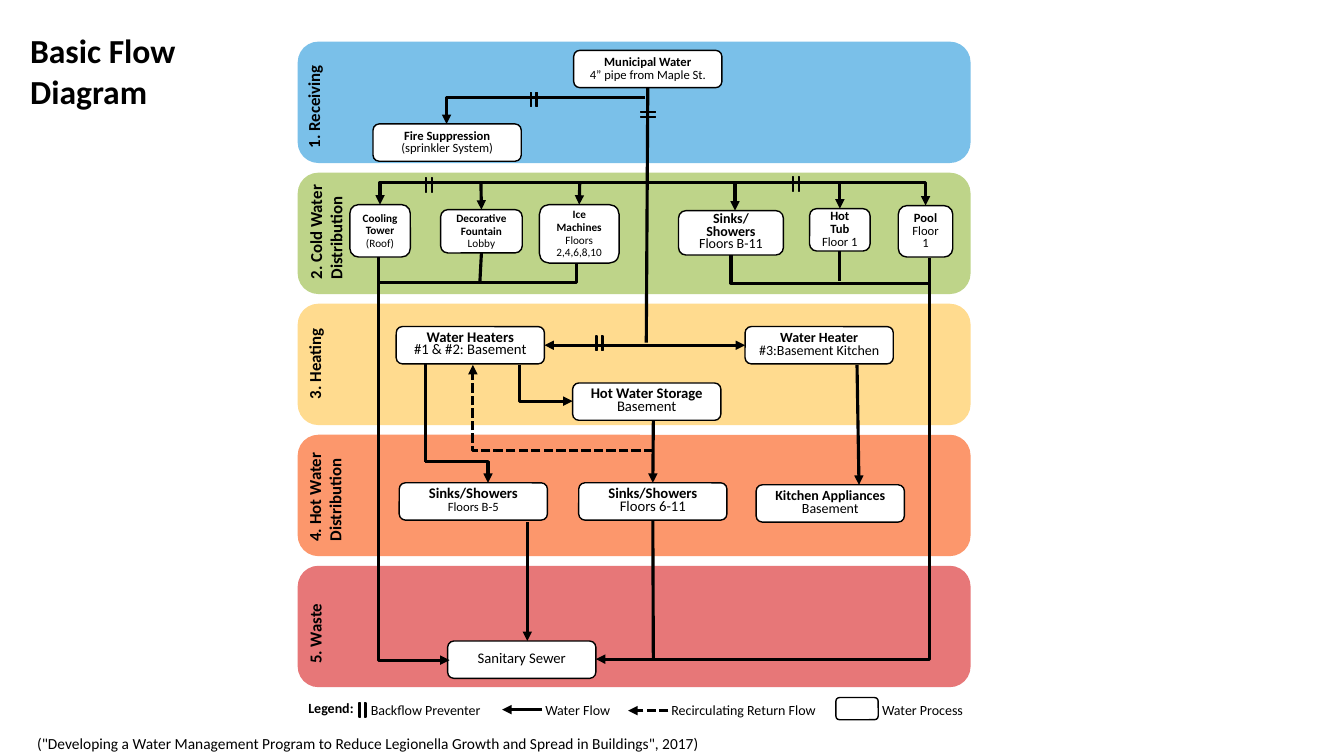
import dataclasses

import pptx
import pptx.dml.color
import pptx.enum.dml
import pptx.enum.shapes
import pptx.enum.text
import pptx.oxml
import pptx.oxml.ns
import pptx.util

SHAPES = pptx.enum.shapes.MSO_SHAPE
CONNECTORS = pptx.enum.shapes.MSO_CONNECTOR
TOP, LEFT, BOTTOM, RIGHT = range(4)


@dataclasses.dataclass(frozen=True)
class Theme:
    font: str = "Calibri"
    ink: str = "000000"
    paper: str = "FFFFFF"
    bands: tuple = ("7AC0E9", "BED489", "FFDB8F", "FC976C", "E77778")
    title: float = 24
    stage: float = 12
    source: float = 11
    large: float = 10.5
    body: float = 10
    small: float = 9
    tiny: float = 8
    leading: float = 9
    outline: float = 1
    pipe: float = 2.25


class FlowPage:
    columns = 133.3
    rows = 75

    def __init__(self, deck, theme):
        self.deck = deck
        self.theme = theme
        self.page = deck.slides.add_slide(deck.slide_layouts[6])

    def across(self, columns):
        return round(self.deck.slide_width * columns / self.columns)

    def down(self, rows):
        return round(self.deck.slide_height * rows / self.rows)

    def place(self, left, top, width, height):
        return self.across(left), self.down(top), self.across(width), self.down(height)

    def color(self, value):
        return pptx.dml.color.RGBColor.from_string(value)

    def add_span(self, para, text, size, bold):
        span = para.add_run()
        span.text = text
        span.font.name = self.theme.font
        span.font.size = pptx.util.Pt(size)
        span.font.bold = bold
        span.font.color.rgb = self.color(self.theme.ink)

    def shape(self, kind, area, fill, line):
        shape = self.page.shapes.add_shape(kind, *self.place(*area))
        shape.shadow.inherit = False
        shape.fill.solid()
        shape.fill.fore_color.rgb = self.color(fill)
        shape.line.color.rgb = self.color(line)
        shape.line.width = pptx.util.Pt(self.theme.outline)
        return shape

    def band(self, area, color):
        self.shape(SHAPES.ROUNDED_RECTANGLE, area, color, color)

    def process(self, area, *lines):
        box = self.shape(SHAPES.ROUNDED_RECTANGLE, area, self.theme.paper, self.theme.ink)
        frame = box.text_frame
        frame.word_wrap = True
        frame.vertical_anchor = pptx.enum.text.MSO_ANCHOR.MIDDLE
        for index, (text, size, bold) in enumerate(lines):
            para = frame.add_paragraph() if index else frame.paragraphs[0]
            para.alignment = pptx.enum.text.PP_ALIGN.CENTER
            para.line_spacing = pptx.util.Pt(self.theme.leading)
            self.add_span(para, text, size, bold)
        return box

    def preventer(self, area, rotation=90, bar=0.066, gap=0.235):
        mark = self.shape(SHAPES.MATH_EQUAL, area, self.theme.ink, self.theme.ink)
        mark.rotation = rotation
        mark.adjustments[0] = bar
        mark.adjustments[1] = gap

    def label(self, area, text, size, bold=False, rotation=0):
        box = self.page.shapes.add_textbox(*self.place(*area))
        box.rotation = rotation
        box.text_frame.word_wrap = True
        box.text_frame.auto_size = pptx.enum.text.MSO_AUTO_SIZE.SHAPE_TO_FIT_TEXT
        self.add_span(box.text_frame.paragraphs[0], text, size, bold)

    def pipe(self, start, end, arrows=(), bent=False, dashed=False, source=None, target=None):
        kind = CONNECTORS.ELBOW if bent else CONNECTORS.STRAIGHT
        pipe = self.page.shapes.add_connector(
            kind, self.across(start[0]), self.down(start[1]),
            self.across(end[0]), self.down(end[1]))
        if source:
            pipe.begin_connect(*source)
        if target:
            pipe.end_connect(*target)
        pipe.line.color.rgb = self.color(self.theme.ink)
        pipe.line.width = pptx.util.Pt(self.theme.pipe)
        if dashed:
            pipe.line.dash_style = pptx.enum.dml.MSO_LINE.SQUARE_DOT
        properties = pipe.element.spPr
        name = pptx.oxml.ns.qn
        if bent:
            properties.find(name("a:prstGeom")).set("prst", "bentConnector2")
        outline = properties.find(name("a:ln"))
        for arrow in arrows:
            outline.append(outline.makeelement(name(f"a:{arrow}End"), {"type": "triangle"}))
        properties.append(properties.makeelement(name("a:effectLst"), {}))


def draw_bands(flow, theme):
    for index, color in enumerate(theme.bands):
        flow.band((29.6, 4.2 + 13 * index, 66.6, 11.9), color)
    stages = (
        ("1. Receiving", (25.2, 8.3, 11.8, 3)),
        ("2. Cold Water Distribution", (26.4, 20.3, 11.8, 5)),
        ("3. Heating", (25.3, 33.2, 11.8, 3)),
        ("4. Hot Water Distribution", (26.3, 46.3, 11.8, 5)),
        ("5. Waste", (26.5, 60.6, 9.5, 3)),
    )
    for text, area in stages:
        flow.label(area, text, theme.stage, True, 270)


def draw_processes(flow, theme):
    large, body, small, tiny = theme.large, theme.body, theme.small, theme.tiny
    wide = (14.7, 3.7)
    processes = (
        ("municipal", (56.9, 5, *wide), "Municipal Water", small, "4” pipe from Maple St.", small),
        ("fire", (37, 12.3, *wide), "Fire Suppression", small, "(sprinkler System)", small),
        ("cooling", (34.7, 20.3, 6, 5.2), "Cooling Tower", tiny, "(Roof)", tiny),
        ("fountain", (43.7, 20.8, 8.1, 4.3), "Decorative Fountain", tiny, "Lobby", tiny),
        ("ice", (53.5, 20.3, 7.9, 5.8), "Ice Machines", tiny, "Floors 2,4,6,8,10", tiny),
        ("cold sinks", (67.3, 20.9, 10.4, 4.4), "Sinks/Showers", body, "Floors B-11", body),
        ("hot tub", (80.3, 20.7, 6, 4.2), "Hot Tub", small, "Floor 1", small),
        ("pool", (89.1, 20.4, 5.4, 5.1), "Pool", small, "Floor 1", small),
        ("heaters", (39.3, 32.4, *wide), "Water Heaters", large, "#1 & #2: Basement", large),
        ("kitchen heater", (73.9, 32.4, *wide), "Water Heater", body, "#3:Basement Kitchen", body),
        ("storage", (56.8, 38, *wide), "Hot Water Storage", large, "Basement", large),
        ("low sinks", (39.6, 47.9, *wide), "Sinks/Showers", large, "Floors B-5", small),
        ("high sinks", (57.4, 47.9, *wide), "Sinks/Showers", large, "Floors 6-11", large),
        ("kitchen", (75, 48.1, *wide), "Kitchen Appliances", body, "Basement", body),
    )
    boxes = {}
    for key, area, heading, heading_size, detail, detail_size in processes:
        boxes[key] = flow.process(area, (heading, heading_size, True), (detail, detail_size, False))
    flow.process((44.4, 63.6, *wide), ("Sanitary Sewer", large, False))
    return boxes


def draw_pipes(flow, boxes):
    head, tail = ("head",), ("tail",)
    flow.pipe((64.2, 8.7), (64.1, 34), source=(boxes["municipal"], BOTTOM))
    flow.pipe((53.9, 34.1), (73.9, 34), ("head", "tail"),
              source=(boxes["heaters"], RIGHT), target=(boxes["kitchen heater"], LEFT))
    flow.pipe((85, 36.2), (85.2, 48.1), tail)
    flow.pipe((52.3, 51.8), (52.3, 63.6), tail)
    flow.pipe((64.8, 51.6), (64.8, 65.4), source=(boxes["high sinks"], BOTTOM))
    flow.pipe((64.8, 41.7), (64.8, 47.9), tail, target=(boxes["high sinks"], TOP))
    flow.pipe((42.2, 36.1), (42.2, 45.8))

    flow.pipe((72.9, 18.1), (72.9, 20.9), tail)
    for key, column in (("fountain", 47.7), ("ice", 57.5), ("hot tub", 83.3)):
        flow.pipe((column, 18.1), (column, 20.7), tail, target=(boxes[key], TOP))
    for key, column in (("fountain", 47.6), ("hot tub", 83.3)):
        flow.pipe((column, 25), (column, 27.9), source=(boxes[key], BOTTOM))

    bends = (
        ((64, 9.7), (44.3, 12.3), tail),
        ((64.3, 18.1), (37.7, 20.3), tail),
        ((64.3, 18.1), (91.8, 20.4), tail),
        ((37.4, 28), (57.2, 26.1), ()),
        ((92.3, 28.1), (72.5, 25.3), ()),
        ((56.8, 39.8), (51.5, 36.2), head),
        ((42.2, 45.8), (48.4, 47.9), tail),
        ((44.6, 65.5), (37.5, 25.5), head),
        ((59.1, 65.4), (92.2, 25.6), head),
    )
    for start, end, arrows in bends:
        flow.pipe(start, end, arrows, bent=True)
    flow.pipe((64.8, 44.7), (46.9, 36.2), tail, bent=True, dashed=True)

    for left, top in ((52, 8.9), (58.5, 33.1), (41.6, 17.4), (78, 17.3)):
        flow.preventer((left, top, 1.9, 1.9))
    flow.preventer((63.3, 10.4, 2, 1.9), 0, 0.053, 0.2)


def draw_legend(flow, theme):
    flow.label((29.6, 68.9, 7.1, 2.7), "Legend:", theme.body, True)
    flow.preventer((35, 69.5, 1.9, 1.9))
    flow.pipe((53.8, 70.4), (49.8, 70.4), ("tail",))
    flow.pipe((66.3, 70.5), (62.3, 70.5), ("tail",), dashed=True)
    flow.process((82.9, 69.2, 4.2, 2.2))
    entries = (
        ("Backflow Preventer", 35.8, 14.6),
        ("Water Flow", 53.1, 11),
        ("Recirculating Return Flow", 65.6, 17.9),
        ("Water Process", 86.5, 11),
    )
    for text, left, width in entries:
        flow.label((left, 69.1, width, 2.7), text, theme.body)


def main():
    deck = pptx.Presentation()
    deck.slide_width = pptx.util.Inches(13.33)
    deck.slide_height = pptx.util.Inches(7.5)
    theme = Theme()
    flow = FlowPage(deck, theme)
    draw_bands(flow, theme)
    boxes = draw_processes(flow, theme)
    draw_pipes(flow, boxes)
    flow.label((2, 2.5, 22.8, 9.1), "Basic Flow Diagram", theme.title, True)
    draw_legend(flow, theme)
    flow.label((2.7, 72.3, 127.3, 2.9),
               '("Developing a Water Management Program to Reduce Legionella Growth '
               'and Spread in Buildings", 2017)', theme.source)
    deck.save("out.pptx")


if __name__ == "__main__":
    main()
